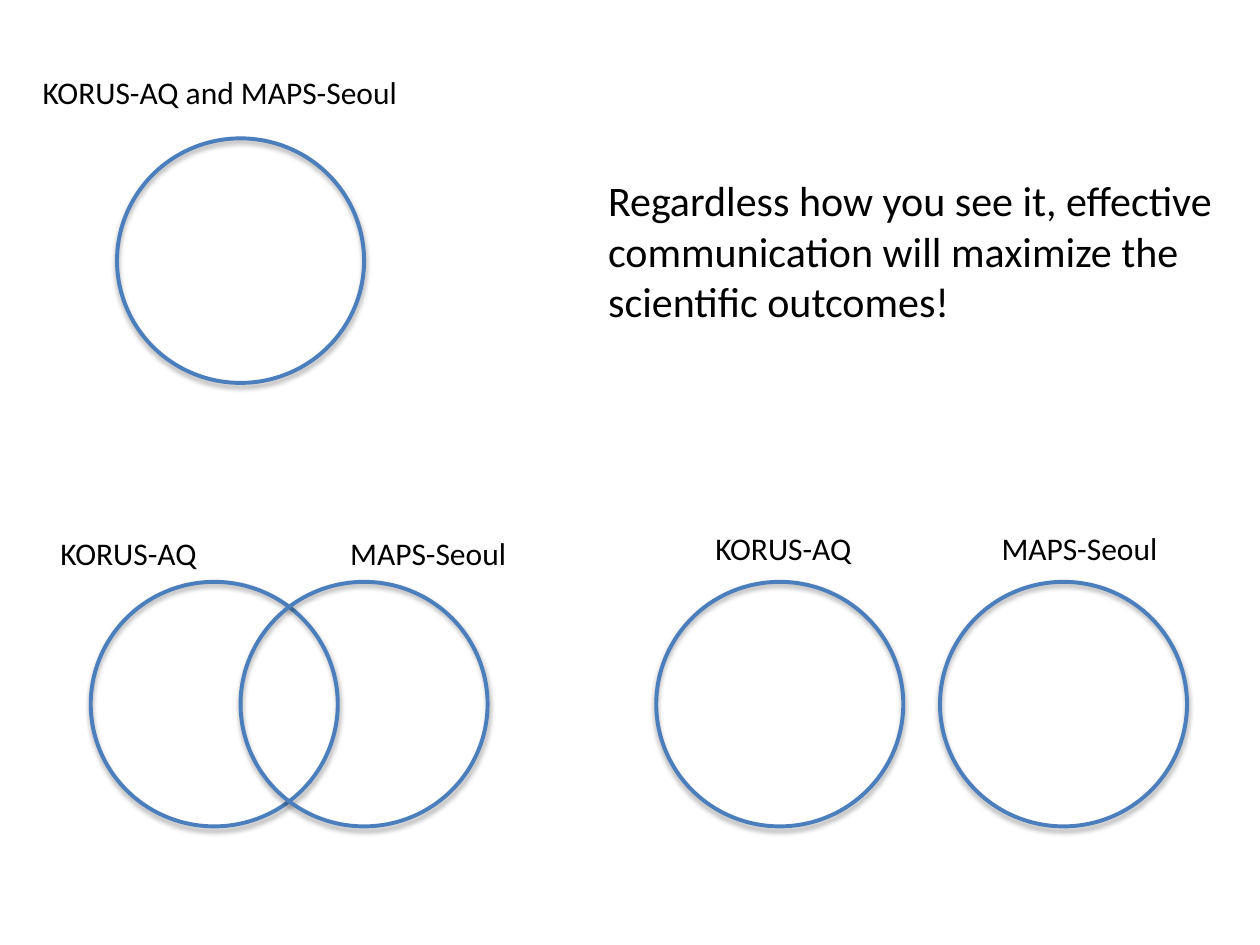
from lxml import etree
from pptx import Presentation
from pptx.dml.color import RGBColor
from pptx.enum.shapes import MSO_SHAPE
from pptx.enum.text import MSO_AUTO_SIZE
from pptx.oxml import parse_xml
from pptx.util import Cm, Pt

OVAL = MSO_SHAPE.OVAL
GROW = MSO_AUTO_SIZE.SHAPE_TO_FIT_TEXT
BLUE = RGBColor(0x4B, 0x7E, 0xBC)
BLACK = RGBColor(0, 0, 0)
SHADOW = (
    '<a:outerShdw xmlns:a="http://schemas.openxmlformats.org/drawingml/2006/main" '
    'blurRad="40000" dist="23000" dir="5400000" rotWithShape="0">'
    '<a:srgbClr val="000000"><a:alpha val="35000"/></a:srgbClr></a:outerShdw>'
)

prs = Presentation()
prs.slide_width, prs.slide_height = Cm(25.4), Cm(19.05)
s = prs.slides.add_slide(prs.slide_layouts[6])


def add_text(text, x, y, w, h, size=18, wrap=False):
    tf = s.shapes.add_textbox(Cm(x), Cm(y), Cm(w), Cm(h)).text_frame
    tf.word_wrap = wrap
    tf.auto_size = GROW
    r = tf.paragraphs[0].add_run()
    r.text = text
    r.font.size = Pt(size)
    r.font.name = "Calibri"
    r.font.color.rgb = BLACK


TOP_ROW, BOTTOM_ROW = 2.79, 11.73
for x, y in [(2.36, TOP_ROW), (1.83, BOTTOM_ROW), (4.85, BOTTOM_ROW),
             (13.23, BOTTOM_ROW), (18.95, BOTTOM_ROW)]:
    sp = s.shapes.add_shape(OVAL, Cm(x), Cm(y), Cm(4.98), Cm(4.93))
    sp.fill.background()
    sp.line.color.rgb = BLUE
    sp.line.width = Pt(2.25)
    sp.shadow.inherit = False
    effects = sp.element.spPr.find("{*}effectLst")
    effects.append(parse_xml(SHADOW))

add_text("KORUS-AQ and MAPS-Seoul", 0.61, 1.35, 7.77, 1.02)
for korus_x, maps_x, y in [(0.97, 6.81, 10.64), (14.17, 19.94, 10.54)]:
    add_text("KORUS-AQ", korus_x, y, 3.33, 1.02)
    add_text("MAPS-Seoul", maps_x, y, 3.68, 1.02)

add_text("Regardless how you see it, effective communication will maximize "
         "the scientific outcomes!", 12.01, 3.4, 13.39, 3.33, size=24, wrap=True)

prs.save("out.pptx")
